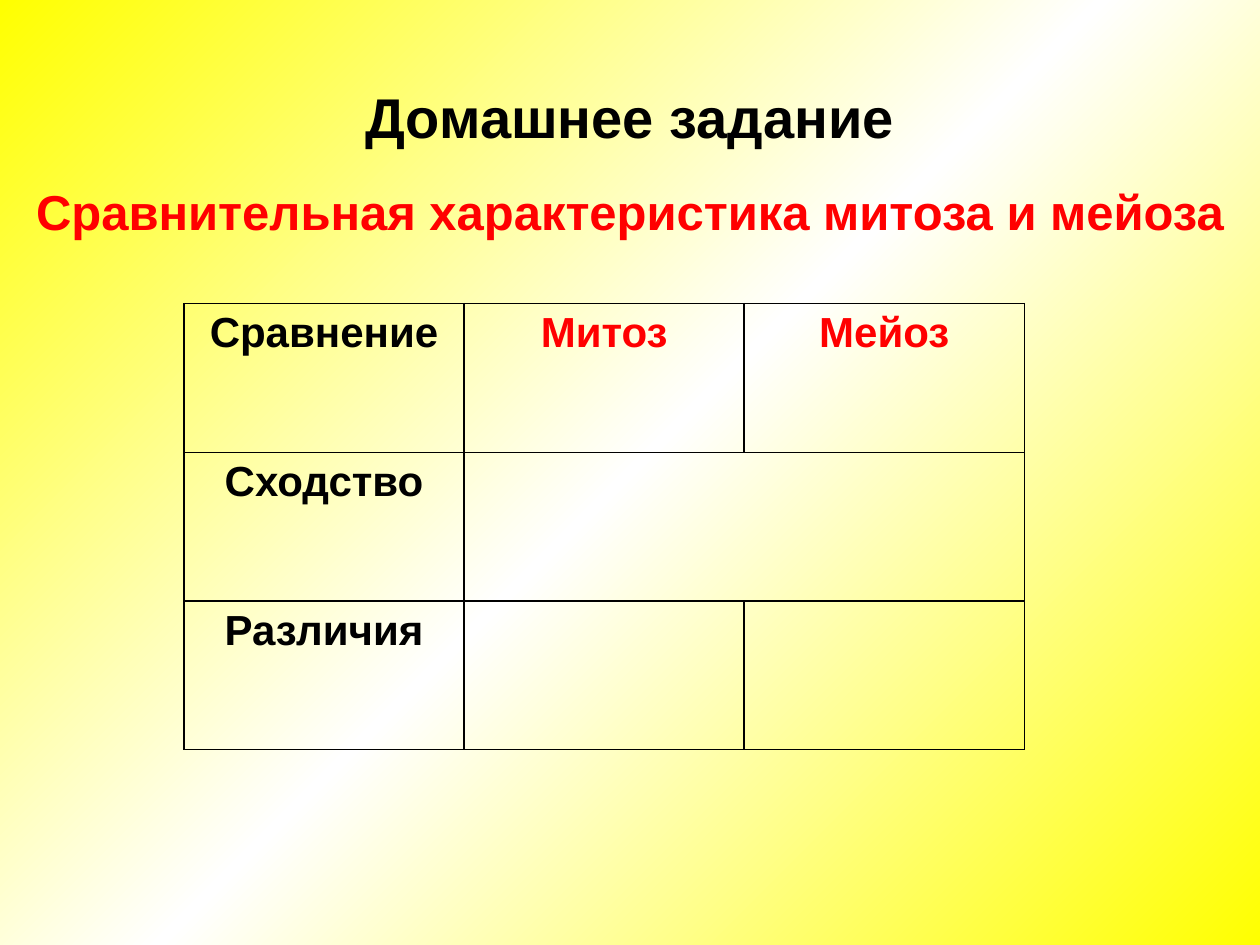
from copy import deepcopy

from pptx import Presentation
from pptx import util as u
from pptx.dml.color import RGBColor
from pptx.enum import text
from pptx.oxml import parse_xml
from pptx.oxml.ns import nsdecls, qn

BLACK = RGBColor(0, 0, 0)
RED = RGBColor(255, 0, 0)
YELLOW = RGBColor(255, 255, 0)
WHITE = RGBColor(255, 255, 255)


class SlideBuilder:
    font = "Arial"
    title_size = 32
    subtitle_size = 28
    cell_size = 24
    border_width = 1

    def __init__(self, presentation):
        self.slide = presentation.slides.add_slide(presentation.slide_layouts[5])

    def background(self, colors, clockwise_angle):
        fill = self.slide.background.fill
        fill.gradient()
        fill.gradient_angle = 360 - clockwise_angle
        stop_list = next(self.slide.element.iter(qn("a:gsLst")))
        while len(stop_list) < len(colors):
            stop_list.insert(1, deepcopy(stop_list[0]))
        for index, (stop, color) in enumerate(zip(fill.gradient_stops, colors)):
            stop.position = index / (len(colors) - 1)
            stop.color.rgb = color

    def add_text(self, frame, wording, size, color):
        paragraph = frame.paragraphs[0]
        paragraph.alignment = text.PP_ALIGN.CENTER
        run = paragraph.add_run()
        run.text = wording
        run.font.name = self.font
        run.font.size = u.Pt(size)
        run.font.bold = True
        run.font.color.rgb = color
        return paragraph

    def title(self, wording, left, top, width, height):
        shape = self.slide.shapes.title
        shape.left, shape.top = u.Inches(left), u.Inches(top)
        shape.width, shape.height = u.Inches(width), u.Inches(height)
        shape.text_frame.vertical_anchor = text.MSO_ANCHOR.MIDDLE
        self.add_text(shape.text_frame, wording, self.title_size, BLACK)

    def subtitle(self, wording, left, top, width, height):
        shape = self.slide.shapes.add_textbox(
            u.Inches(left), u.Inches(top), u.Inches(width), u.Inches(height))
        shape.text_frame.word_wrap = True
        paragraph = self.add_text(shape.text_frame, wording, self.subtitle_size, RED)
        paragraph.space_before = u.Pt(0.2 * self.subtitle_size)

    def border(self, cell):
        properties = cell._tc.get_or_add_tcPr()
        for index, side in enumerate(("lnL", "lnR", "lnT", "lnB")):
            properties.insert(index, parse_xml(
                f'<a:{side} {nsdecls("a")} w="{u.Pt(self.border_width)}">'
                f'<a:solidFill><a:srgbClr val="{BLACK}"/></a:solidFill></a:{side}>'))

    def table(self, rows, left, top, width, height):
        table = self.slide.shapes.add_table(
            len(rows), len(rows[0]), u.Inches(left), u.Inches(top),
            u.Inches(width), u.Inches(height)).table
        table.first_row = False
        table.horz_banding = False
        for row_index, row in enumerate(rows):
            for column_index, wording in enumerate(row):
                cell = table.cell(row_index, column_index)
                cell.fill.background()
                self.border(cell)
                if wording:
                    color = RED if row_index == 0 and column_index else BLACK
                    self.add_text(cell.text_frame, wording, self.cell_size, color)
        return table


def main():
    presentation = Presentation()
    presentation.slide_width = u.Inches(10)
    presentation.slide_height = u.Inches(7.5)
    builder = SlideBuilder(presentation)
    builder.background((YELLOW, WHITE, YELLOW), 45)
    builder.title("Домашнее задание", 0.5, 0.3, 9, 1.25)
    builder.subtitle("Сравнительная характеристика митоза и мейоза", 0, 1.39, 10, 0.66)
    comparison = builder.table((
        ("Сравнение", "Митоз", "Мейоз"),
        ("Сходство", "", ""),
        ("Различия", "", ""),
    ), 1.46, 2.41, 6.67, 3.54)
    comparison.cell(1, 1).merge(comparison.cell(1, 2))
    presentation.save("out.pptx")


if __name__ == "__main__":
    main()
